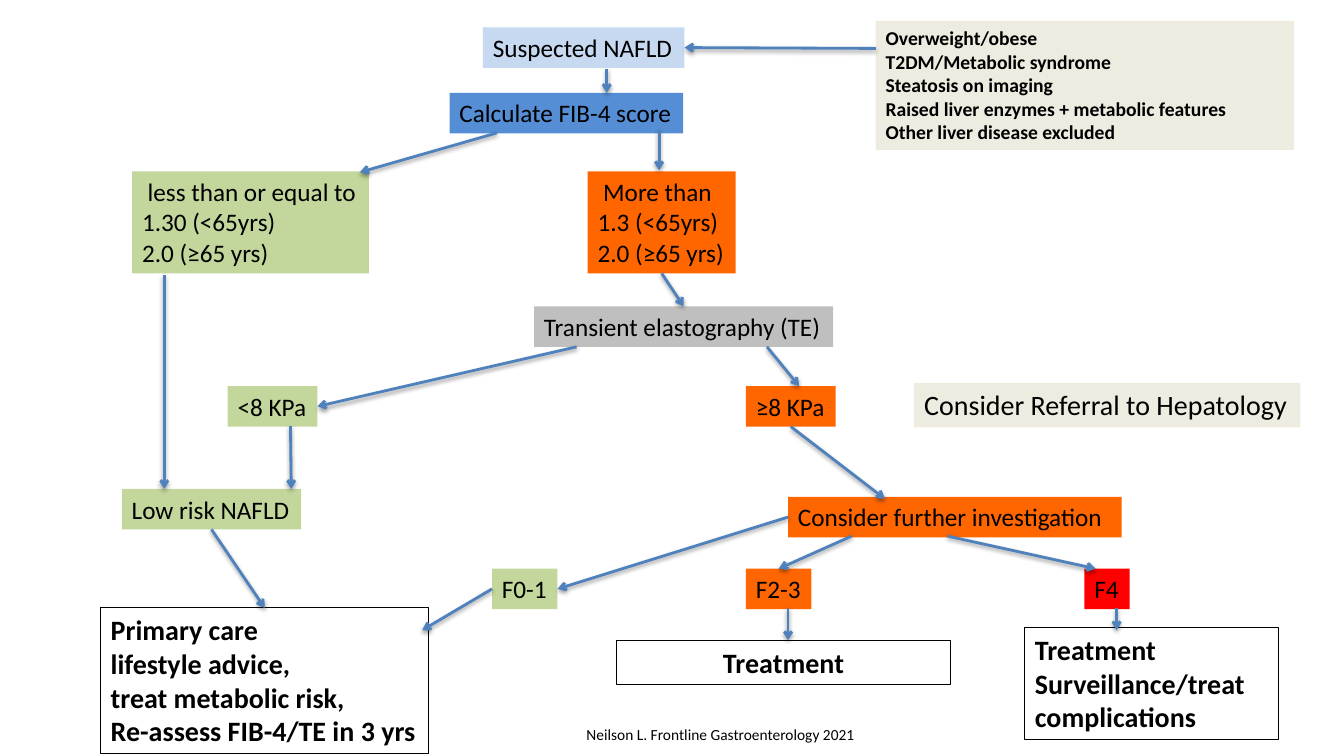
"""Build the NAFLD referral pathway flowchart slide."""
from lxml import etree
from pptx import Presentation
from pptx import util as u
from pptx.dml.color import RGBColor
from pptx.enum import shapes, text
from pptx.oxml.ns import qn

COLOURS = {
    "ink": "000000", "arrow": "4F81BD", "start": "C6D9F1", "score": "558ED5",
    "low": "C3D69B", "high": "FF6600", "test": "BFBFBF", "severe": "FF0000",
    "note": "EEECE1",
}
TOP, LEFT, BOTTOM, RIGHT = range(4)

# name: (left, top, width, height in cm), fill, size, bold, wrap, lines
STEPS = {
    "suspected": ((12.17, 0.69, 5.08, 1.02), "start", 18, False, False, ["Suspected NAFLD"]),
    "fib4": ((11.33, 2.34, 5.89, 1.02), "score", 18, False, False, ["Calculate FIB-4 score"]),
    "low score": ((3.33, 4.32, 5.97, 2.57), "low", 18, False, False,
                  [" less than or equal to", "1.30 (<65yrs)", "2.0 (≥65 yrs)"]),
    "high score": ((14.81, 4.32, 3.73, 2.57), "high", 18, False, False,
                   [" More than", "1.3 (<65yrs)", "2.0 (≥65 yrs)"]),
    "elastography": ((13.46, 7.72, 7.54, 1.02), "test", 18, False, False,
                     ["Transient elastography (TE)"]),
    "soft": ((5.74, 9.73, 2.26, 1.02), "low", 18, False, False, ["<8 KPa"]),
    "low risk": ((3.07, 12.32, 4.52, 1.02), "low", 18, False, False, ["Low risk NAFLD"]),
    "primary care": ((2.54, 15.32, 8.26, 3.68), None, 20, True, False,
                     ["Primary care", "lifestyle advice,", "treat metabolic risk,",
                      "Re-assess FIB-4/TE in 3 yrs"]),
    "stiff": ((18.8, 9.73, 2.26, 1.02), "high", 18, False, False, ["≥8 KPa"]),
    "investigation": ((19.86, 12.52, 8.41, 1.02), "high", 18, False, True,
                      ["Consider further investigation"]),
    "F0-1": ((12.4, 14.33, 1.65, 1.02), "low", 18, False, False, ["F0-1"]),
    "F2-3": ((18.8, 14.33, 1.65, 1.02), "high", 18, False, False, ["F2-3"]),
    "F4": ((27.33, 14.33, 1.14, 1.02), "severe", 18, False, False, ["F4"]),
    "surveillance": ((25.83, 15.82, 6.4, 2.82), None, 20, True, True,
                     ["Treatment", "Surveillance/treat complications"]),
    "treatment": ((15.54, 16.13, 8.41, 1.12), None, 20, True, True, ["Treatment"]),
    "criteria": ((22.07, 0.53, 10.54, 3.25), "note", 14, True, True,
                 ["Overweight/obese", "T2DM/Metabolic syndrome", "Steatosis on imaging",
                  "Raised liver enzymes + metabolic features",
                  "Other liver disease excluded"]),
    "referral": ((23.04, 9.65, 9.73, 1.12), "note", 20, False, False,
                 ["Consider Referral to Hepatology"]),
    "citation": ((14.53, 18.16, 7.34, 0.74), None, 11, False, False,
                 ["Neilson L. Frontline Gastroenterology 2021"]),
}
OUTLINED = {"primary care", "surveillance", "treatment"}
CENTRED = {"treatment"}

# each end is a point in cm or a (step, side) joint
ARROWS = [
    ((15.29, 1.73), (15.29, 2.34)),
    ((12.52, 3.35), (9.07, 4.34)),
    ((16.61, 3.28), (16.61, 4.29)),
    (("high score", BOTTOM), ("elastography", TOP)),
    ((14.53, 8.74), ("soft", RIGHT)),
    ((19.33, 8.74), (20.14, 9.73)),
    ((7.32, 10.74), (7.34, 12.32)),
    (("low risk", BOTTOM), ("primary care", TOP)),
    (("F0-1", LEFT), (10.64, 15.88)),
    (("investigation", LEFT), ("F0-1", RIGHT)),
    ((21.46, 13.51), ("F2-3", TOP)),
    ((23.88, 13.51), (27.61, 14.33)),
    (("stiff", BOTTOM), (22.3, 12.57)),
    ((28.14, 15.32), (28.14, 15.88)),
    ((19.86, 15.32), (19.86, 16.13)),
    ((4.14, 6.93), (4.14, 12.32)),
    ((22.07, 1.22), ("suspected", RIGHT)),
]


def colour(name):
    return RGBColor.from_string(COLOURS[name])


def add_step(slide, name):
    place, fill, size, bold, wrap, lines = STEPS[name]
    step = slide.shapes.add_textbox(*map(u.Cm, place))
    if fill:
        step.fill.solid()
        step.fill.fore_color.rgb = colour(fill)
    if name in OUTLINED:
        step.line.color.rgb = colour("ink")
        step.line.width = u.Pt(0.75)
    frame = step.text_frame
    frame.word_wrap = wrap
    frame.auto_size = text.MSO_AUTO_SIZE.SHAPE_TO_FIT_TEXT
    for index, line in enumerate(lines):
        paragraph = frame.add_paragraph() if index else frame.paragraphs[0]
        if name in CENTRED:
            paragraph.alignment = text.PP_ALIGN.CENTER
        run = paragraph.add_run()
        run.text = line
        run.font.name = "Calibri"
        run.font.size = u.Pt(size)
        run.font.bold = bold
        run.font.color.rgb = colour("ink")
    return step


def locate(end):
    if end[0] not in STEPS:
        return end
    left, top, width, height = STEPS[end[0]][0]
    return {
        TOP: (left + width / 2, top),
        LEFT: (left, top + height / 2),
        BOTTOM: (left + width / 2, top + height),
        RIGHT: (left + width, top + height / 2),
    }[end[1]]


def add_arrow(slide, steps, start, finish):
    points = map(u.Cm, locate(start) + locate(finish))
    arrow = slide.shapes.add_connector(shapes.MSO_CONNECTOR.STRAIGHT, *points)
    if start[0] in steps:
        arrow.begin_connect(steps[start[0]], start[1])
    if finish[0] in steps:
        arrow.end_connect(steps[finish[0]], finish[1])
    arrow.line.color.rgb = colour("arrow")
    arrow.line.width = u.Pt(2)
    etree.SubElement(arrow.line._get_or_add_ln(), qn("a:tailEnd"), type="arrow")


def main():
    deck = Presentation()
    deck.slide_width, deck.slide_height = u.Cm(33.87), u.Cm(19.05)
    slide = deck.slides.add_slide(deck.slide_layouts[6])
    steps = {name: add_step(slide, name) for name in STEPS}
    for start, finish in ARROWS:
        add_arrow(slide, steps, start, finish)
    deck.save("out.pptx")


if __name__ == "__main__":
    main()
